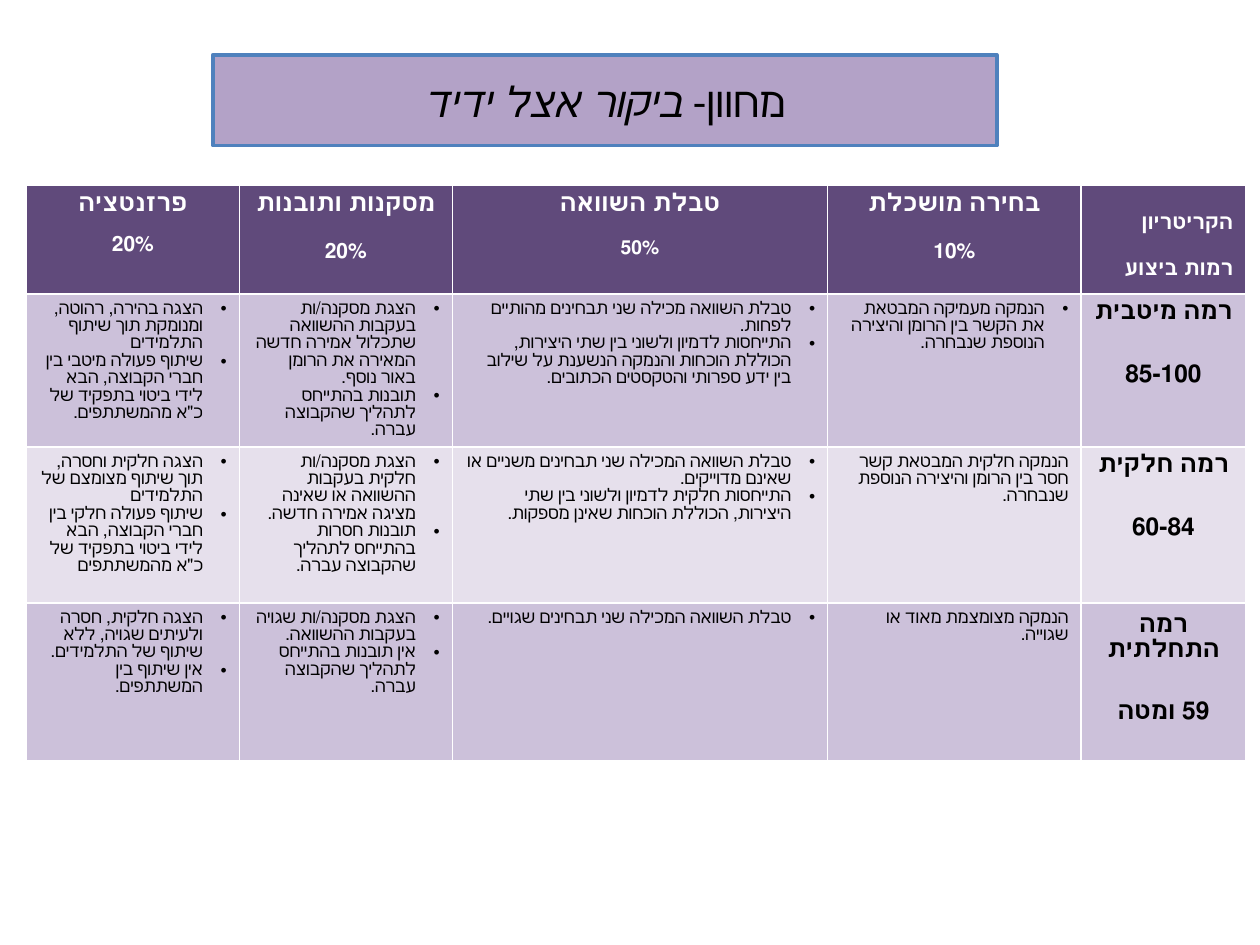
"""Build the assessment rubric slide: a title box above a right-to-left criteria table."""
from dataclasses import dataclass

from pptx import Presentation
from pptx.dml.color import RGBColor
from pptx.enum.shapes import MSO_SHAPE
from pptx.enum.text import MSO_ANCHOR, PP_ALIGN
from pptx.oxml.xmlchemy import OxmlElement
from pptx.util import Inches, Pt

WIDTH, HEIGHT = Inches(10), Inches(7.5)
COLORS = {
    "title": "B3A2C7", "outline": "4F81BD", "header": "604A7B",
    "dark": "CCC1DA", "light": "E6E0EC", "text": "000000", "white": "FFFFFF",
}
FONT = "Calibri"
COL_SHARES = (0.169, 0.169, 0.298, 0.201, 0.131)
ROW_SHARES = (0.115, 0.162, 0.165, 0.167)
BULLET_INDENT = Inches(0.19)
GAP_FACTOR = 1.2


@dataclass(frozen=True)
class Heading:
    lines: tuple[str, str]
    sizes: tuple[float, float]
    gap: float
    align: PP_ALIGN = PP_ALIGN.CENTER
    top: float = 0.05


@dataclass(frozen=True)
class Level:
    label: Heading
    fill: str
    criteria: tuple[tuple[str, ...], ...]
    plain_column: int | None = None


HEADINGS = (
    Heading(("פרזנטציה", "20%"), (14, 12), 9),
    Heading(("מסקנות ותובנות", "20%"), (14, 12), 12),
    Heading(("טבלת השוואה", "50%"), (14, 11), 11),
    Heading(("בחירה מושכלת", "10%"), (14, 12), 12),
    Heading(("הקריטריון", "רמות ביצוע"), (12, 12), 12, PP_ALIGN.RIGHT, 0.22),
)

LEVELS = (
    Level(Heading(("רמה מיטבית", "85-100"), (14, 14), 18), "dark", (
        ("הצגה בהירה, רהוטה, ומנומקת תוך שיתוף התלמידים",
         "שיתוף פעולה מיטבי בין חברי הקבוצה, הבא לידי ביטוי בתפקיד של כ\"א מהמשתתפים."),
        ("הצגת מסקנה/ות בעקבות ההשוואה שתכלול אמירה חדשה המאירה את הרומן באור נוסף.",
         "תובנות בהתייחס לתהליך שהקבוצה עברה."),
        ("טבלת השוואה מכילה שני תבחינים מהותיים לפחות.",
         "התייחסות לדמיון ולשוני בין שתי היצירות, הכוללת הוכחות והנמקה הנשענת על "
         "שילוב בין ידע ספרותי והטקסטים הכתובים."),
        ("הנמקה מעמיקה המבטאת את הקשר בין הרומן והיצירה הנוספת שנבחרה.",),
    )),
    Level(Heading(("רמה חלקית", "60-84"), (14, 14), 18), "light", (
        ("הצגה חלקית וחסרה, תוך שיתוף מצומצם של התלמידים",
         "שיתוף פעולה חלקי בין חברי הקבוצה, הבא לידי ביטוי בתפקיד של כ\"א מהמשתתפים"),
        ("הצגת מסקנה/ות חלקית בעקבות ההשוואה או שאינה מציגה אמירה חדשה.",
         "תובנות חסרות בהתייחס לתהליך שהקבוצה עברה."),
        ("טבלת השוואה המכילה שני תבחינים משניים או שאינם מדוייקים.",
         "התייחסות חלקית לדמיון ולשוני בין שתי היצירות, הכוללת הוכחות שאינן מספקות."),
        ("הנמקה חלקית המבטאת קשר חסר בין הרומן והיצירה הנוספת שנבחרה.",),
    ), plain_column=3),
    Level(Heading(("רמה התחלתית", "59 ומטה"), (14, 14), 18, top=0.08), "dark", (
        ("הצגה חלקית, חסרה ולעיתים שגויה, ללא שיתוף של התלמידים.",
         "אין שיתוף בין המשתתפים."),
        ("הצגת מסקנה/ות שגויה בעקבות ההשוואה.",
         "אין תובנות בהתייחס לתהליך שהקבוצה עברה."),
        ("טבלת השוואה המכילה שני תבחינים שגויים.",),
        ("הנמקה מצומצמת מאוד או שגוייה.",),
    ), plain_column=3),
)


def rgb(name: str) -> RGBColor:
    """Return a named colour."""
    return RGBColor.from_string(COLORS[name])


def format_run(r, size: float, color: str, bold: bool = False, italic: bool = False) -> None:
    """Set the font of one run."""
    r.font.name, r.font.size = FONT, Pt(size)
    r.font.bold, r.font.italic = bold, italic
    r.font.color.rgb = rgb(color)


def format_paragraph(p, size: float, color: str, align: PP_ALIGN, bold: bool = False) -> None:
    """Set a paragraph right to left and format its runs."""
    p.alignment = align
    p._p.get_or_add_pPr().set("rtl", "1")
    for r in p.runs:
        format_run(r, size, color, bold)


def add_bullet(p) -> None:
    """Give a paragraph a hanging bullet."""
    pPr = p._p.get_or_add_pPr()
    pPr.set("marL", str(BULLET_INDENT))
    pPr.set("indent", str(-BULLET_INDENT))
    for tag, key, value in (("a:buFont", "typeface", "Arial"), ("a:buChar", "char", "•")):
        el = OxmlElement(tag)
        el.set(key, value)
        pPr.append(el)


def fill_cell(cell, lines: tuple[str, ...], fill: str) -> None:
    """Put lines of text on a plain cell fill."""
    cell.fill.solid()
    cell.fill.fore_color.rgb = rgb(fill)
    cell.text_frame.text = "\n".join(lines)


def draw_heading(cell, heading: Heading, fill: str, color: str) -> None:
    """Draw a bold two-line heading with a gap between its lines."""
    fill_cell(cell, heading.lines, fill)
    cell.margin_top = Inches(heading.top)
    for p, size in zip(cell.text_frame.paragraphs, heading.sizes):
        format_paragraph(p, size, color, heading.align, bold=True)
    p.space_before = Pt(heading.gap * GAP_FACTOR)


def draw_criteria(cell, lines: tuple[str, ...], fill: str, bulleted: bool) -> None:
    """Draw the criteria of one level in one cell."""
    fill_cell(cell, lines, fill)
    for p in cell.text_frame.paragraphs:
        format_paragraph(p, 10, "text", PP_ALIGN.RIGHT)
        if bulleted:
            add_bullet(p)


def draw_title(s) -> None:
    """Draw the framed title."""
    sp = s.shapes.add_shape(MSO_SHAPE.RECTANGLE, int(WIDTH * 0.169), int(HEIGHT * 0.058),
                            int(WIDTH * 0.622), int(HEIGHT * 0.096))
    sp.shadow.inherit = False
    sp.fill.solid()
    sp.fill.fore_color.rgb = rgb("title")
    sp.line.color.rgb = rgb("outline")
    sp.line.width = Pt(2.25)
    tf = sp.text_frame
    tf.vertical_anchor = MSO_ANCHOR.MIDDLE
    p = tf.paragraphs[0]
    p.alignment = PP_ALIGN.CENTER
    for text, italic in (("מחוון- ", False), ("ביקור אצל ידיד", True)):
        r = p.add_run()
        r.text = text
        format_run(r, 24, "text", italic=italic)


def draw_rubric(s) -> None:
    """Draw the table of criteria and levels."""
    table = s.shapes.add_table(
        len(ROW_SHARES), len(COL_SHARES), int(WIDTH * 0.021), int(HEIGHT * 0.196),
        int(WIDTH * sum(COL_SHARES)), int(HEIGHT * sum(ROW_SHARES))).table
    for column, share in zip(table.columns, COL_SHARES):
        column.width = int(WIDTH * share)
    for row, share in zip(table.rows, ROW_SHARES):
        row.height = int(HEIGHT * share)
    for col, heading in enumerate(HEADINGS):
        draw_heading(table.cell(0, col), heading, "header", "white")
    for row, level in enumerate(LEVELS, start=1):
        for col, lines in enumerate(level.criteria):
            draw_criteria(table.cell(row, col), lines, level.fill, col != level.plain_column)
        draw_heading(table.cell(row, len(level.criteria)), level.label, level.fill, "text")


def main() -> None:
    """Build and save the slide."""
    prs = Presentation()
    prs.slide_width, prs.slide_height = WIDTH, HEIGHT
    s = prs.slides.add_slide(prs.slide_layouts[6])
    draw_title(s)
    draw_rubric(s)
    prs.save("out.pptx")


if __name__ == "__main__":
    main()
